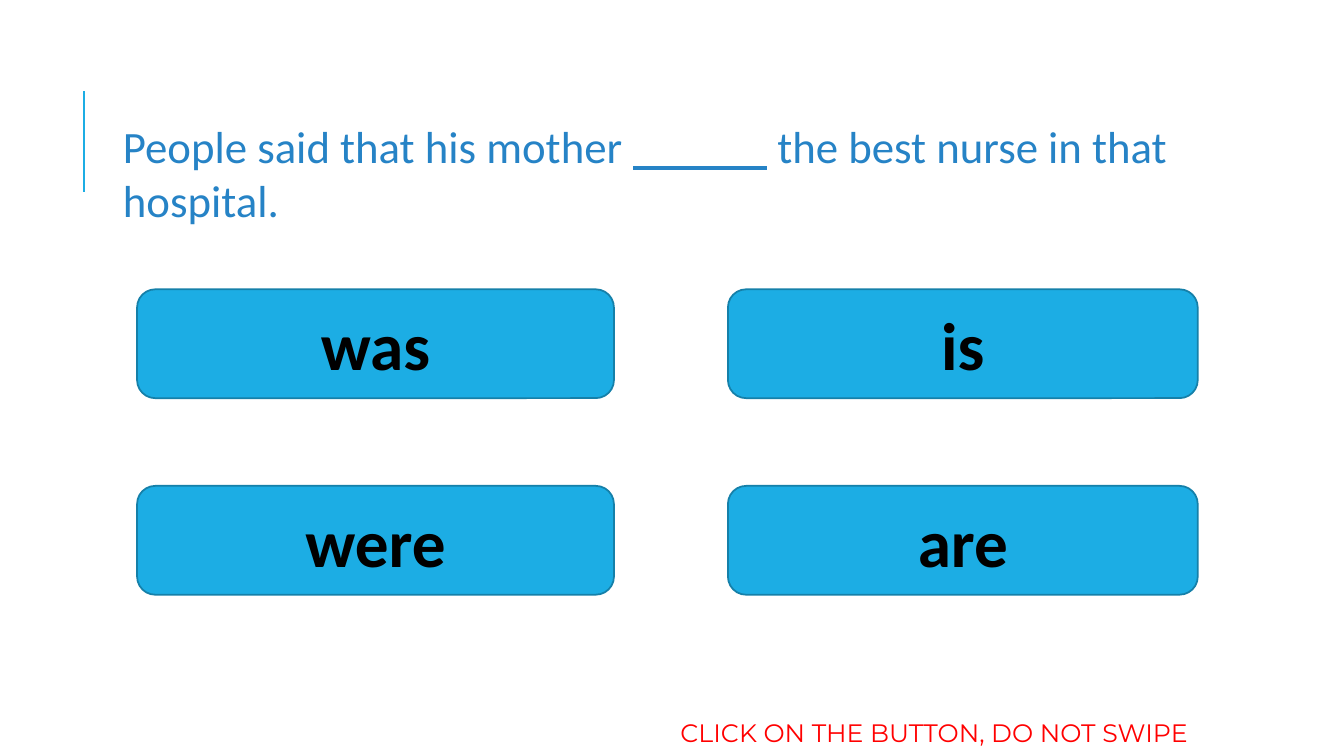
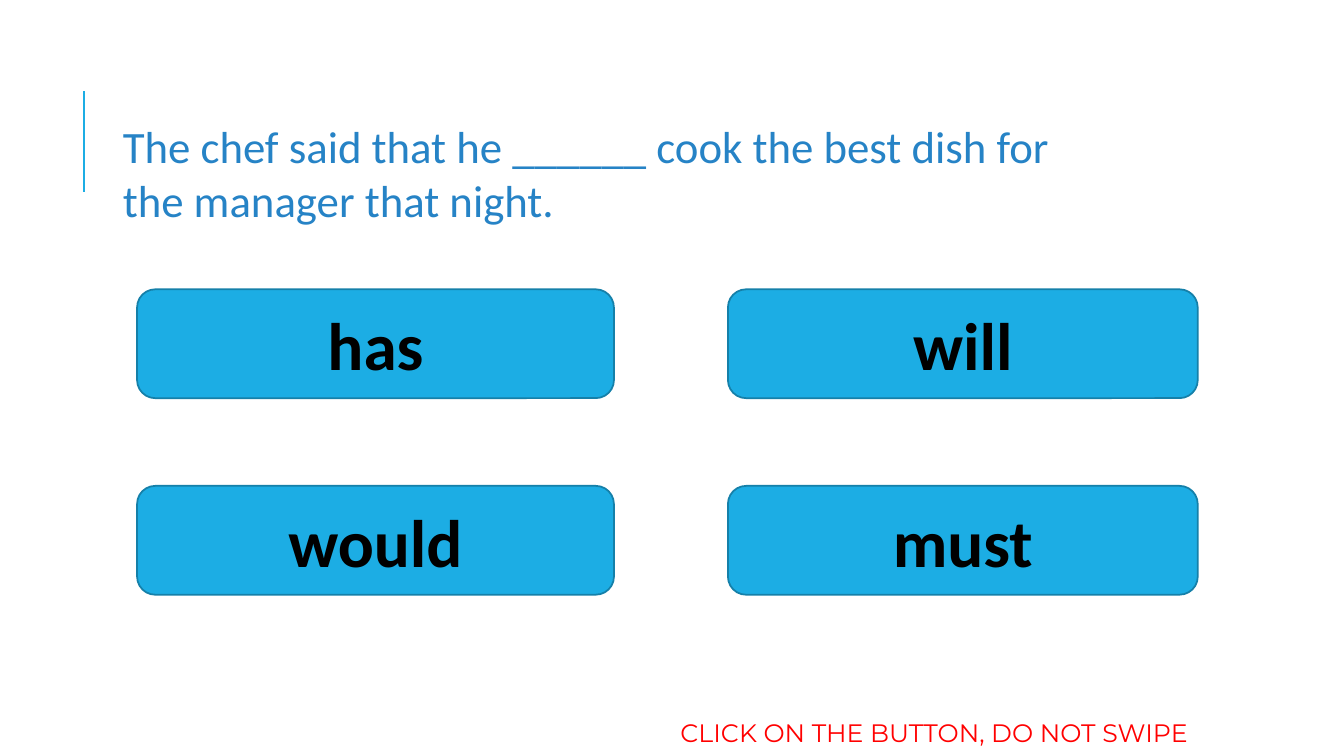
from itertools import product

from pptx import Presentation
from pptx.dml.color import RGBColor
from pptx.enum.shapes import MSO_CONNECTOR as CONNECTOR, MSO_SHAPE as SHAPE
from pptx.enum.text import MSO_ANCHOR as ANCHOR, PP_ALIGN as ALIGN
from pptx.oxml.ns import qn
from pptx.util import Inches, Pt

ACCENT = "1CADE4"
BUTTON_EDGE = "1580A9"
QUESTION_BLUE = "2683C6"
HINT_RED = "FF0000"
BLACK = "000000"

HINT = "CLICK ON THE BUTTON, DO NOT SWIPE"
BUTTON_COLUMNS = [(0, 4.73), (5.86, 4.66)]
BUTTON_HEIGHT = 1.08
ROW_STEP = 1.95

QUIZZES = [
    {
        "question": [[("People said that his mother ", False), ("______", True),
                      (" the best nurse in that hospital.", False)]],
        "question_box": (1.12, 1.13, 11.88, 1.18),
        "answers": ["was", "is", "were", "are"],
    },
    {
        "question": [[("The chef said that he ______ cook the best dish for", False)],
                     [("the manager that night.", False)]],
        "question_box": (1.12, 1.13, 9.46, 1.18),
        "answers": ["has", "will", "would", "must"],
    },
]


def rgb(value):
    return RGBColor.from_string(value)


def write_text(frame, paragraphs, *, size, color, font="Calibri", bold=False,
               align=ALIGN.LEFT, anchor=ANCHOR.TOP):
    frame.word_wrap = True
    frame.vertical_anchor = anchor
    for index, pieces in enumerate(paragraphs):
        paragraph = frame.add_paragraph() if index else frame.paragraphs[0]
        paragraph.alignment = align
        for words, underlined in pieces:
            run = paragraph.add_run()
            run.text = words
            run.font.name = font
            run.font.size = Pt(size)
            run.font.bold = bold
            run.font.underline = underlined
            run.font.color.rgb = rgb(color)


def add_text(slide, box, paragraphs, **style):
    holder = slide.shapes.add_textbox(*map(Inches, box))
    write_text(holder.text_frame, paragraphs, **style)


def add_title_rule(slide, x, bottom, top):
    rule = slide.shapes.add_connector(
        CONNECTOR.STRAIGHT, Inches(x), Inches(bottom), Inches(x), Inches(top))
    rule.line.color.rgb = rgb(ACCENT)
    rule.line.width = Pt(1.5)
    properties = rule._element.spPr
    properties.append(properties.makeelement(qn("a:effectLst"), {}))


def add_button(slide, box, answer):
    button = slide.shapes.add_shape(SHAPE.ROUNDED_RECTANGLE, *map(Inches, box))
    button.shadow.inherit = False
    button.fill.solid()
    button.fill.fore_color.rgb = rgb(ACCENT)
    button.line.color.rgb = rgb(BUTTON_EDGE)
    button.line.width = Pt(1.25)
    write_text(button.text_frame, [[(answer, False)]], size=48, color=BLACK,
               bold=True, align=ALIGN.CENTER, anchor=ANCHOR.MIDDLE)


def add_answers(slide, left, top, answers):
    cells = product(range(2), BUTTON_COLUMNS)
    for answer, (row, (offset, width)) in zip(answers, cells):
        box = (left + offset, top + row * ROW_STEP, width, BUTTON_HEIGHT)
        add_button(slide, box, answer)


def add_quiz_slide(deck, question, question_box, answers):
    slide = deck.slides.add_slide(deck.slide_layouts[6])
    add_title_rule(slide, 0.83, 1.9, 0.9)
    add_text(slide, question_box, question, size=32, color=QUESTION_BLUE)
    add_answers(slide, 1.36, 2.87, answers)
    add_text(slide, (6.65, 7.07, 5.73, 0.4), [[(HINT, False)]],
             size=18, color=HINT_RED, font="Montserrat")


def main():
    deck = Presentation()
    deck.slide_width = Inches(13.33)
    deck.slide_height = Inches(7.5)
    for quiz in QUIZZES:
        add_quiz_slide(deck, **quiz)
    deck.save("out.pptx")


if __name__ == "__main__":
    main()
